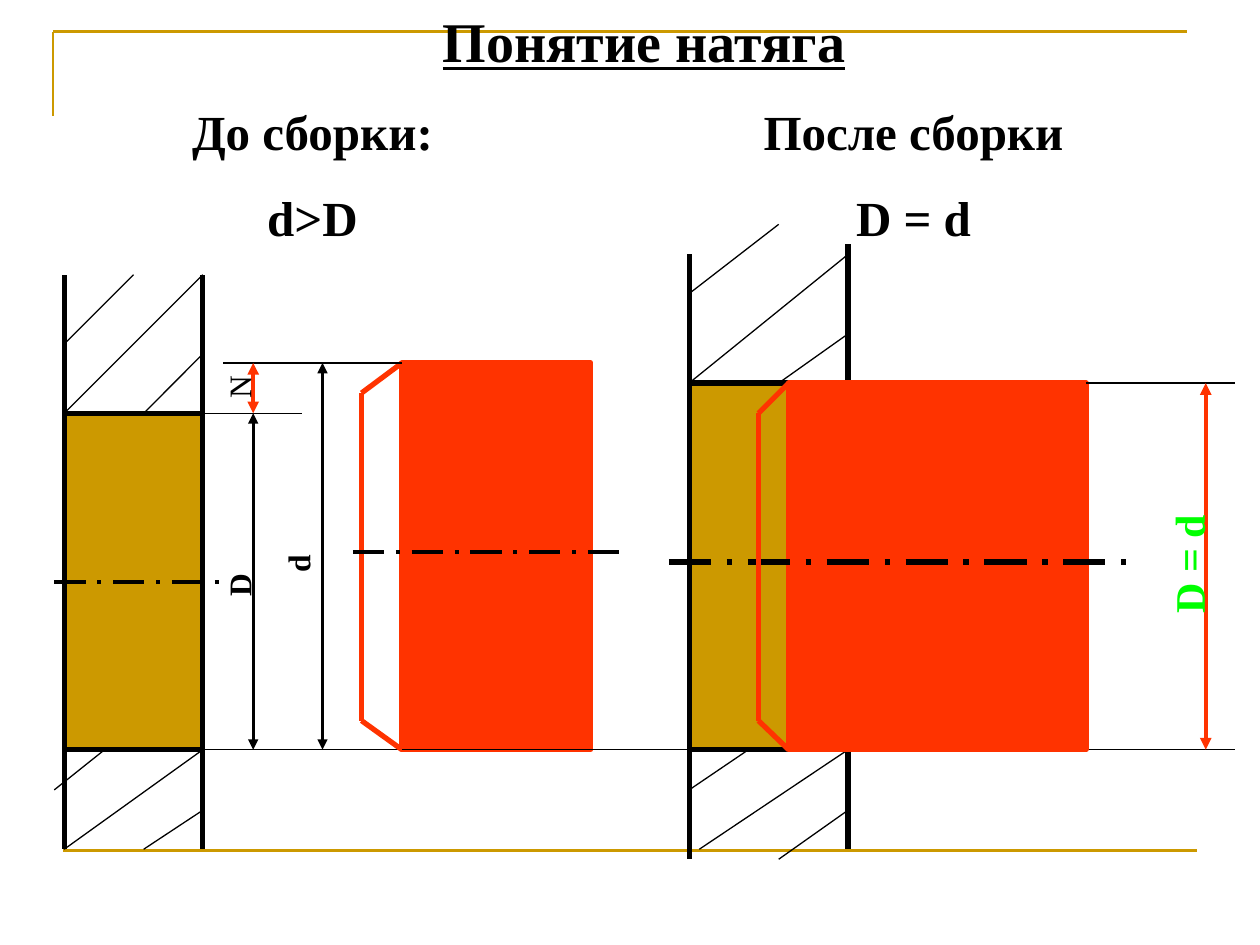
from itertools import pairwise
from pptx import Presentation
from pptx.dml.color import RGBColor
from pptx.enum.dml import MSO_LINE
from pptx.enum.shapes import MSO_CONNECTOR as Conn, MSO_SHAPE as Kind
from pptx.enum.text import MSO_ANCHOR as Anchor, PP_ALIGN as Align
from pptx.oxml.ns import qn
from pptx.util import Pt
from lxml.etree import SubElement

BLACK, GOLD, RED, GREEN = "000000", "CC9900", "FF3300", "00FF00"

# Line styles: colour, width, dashed, arrows at both ends
STYLES = {
    "frame": (GOLD, 1.5, False, False),
    "wall": (BLACK, 3, False, False),
    "thin": (BLACK, 0.75, False, False),
    "edge": (RED, 3, False, False),
    "axis": (BLACK, 2.25, True, False),
    "bold axis": (BLACK, 3, True, False),
    "size": (BLACK, 1.5, False, True),
    "red size": (RED, 2.25, False, True),
}

# Shared positions: hole walls, shaft sides, tops and base
HOLE_L, HOLE_R, HOLE_T = 36.7, 115.9, 236.2
SHAFT_L, SHAFT_R, SHAFT_T = 229.7, 337.7, 207.4
FIT_L, FIT_R, FIT_T = 393.8, 484.6, 218.9
PRESS_L, PRESS_R = 450.7, 620.6
BASE, LOW, END = 428.4, 485.3, 705.6

# Parts from back to front: a block is (fill, line, left, top, right, bottom),
# a line is (style, point, point, ...)
BEFORE = [
    (GOLD, BLACK, HOLE_L, HOLE_T, HOLE_R, BASE),
    ("wall", (HOLE_L, BASE), (HOLE_L, LOW)),
    ("wall", (HOLE_R, BASE), (HOLE_R, LOW)),
    ("wall", (HOLE_L, HOLE_T), (HOLE_L, 157)),
    ("wall", (HOLE_R, HOLE_T), (HOLE_R, 157)),
    ("thin", (HOLE_L, HOLE_T), (HOLE_R, 157)),
    ("thin", (82.1, HOLE_T), (HOLE_R, 202.3)),
    ("thin", (HOLE_L, 196.6), (76.3, 157)),
    ("thin", (HOLE_R, BASE), (HOLE_L, LOW)),
    ("thin", (HOLE_R, 463), (82.1, LOW)),
    ("thin", (59.8, BASE), (31, 451.4)),
    ("axis", (31, 332.6), (127.4, 332.6)),
    (RED, RED, SHAFT_L, SHAFT_T, SHAFT_R, BASE),
    ("thin", (HOLE_R, BASE), (241.2, BASE)),
    ("edge", (SHAFT_L, SHAFT_T), (206.6, 224.6), (206.6, 411.8), (SHAFT_L, BASE)),
    ("axis", (201.6, 315.4), (360, 315.4)),
    ("thin", (SHAFT_L, SHAFT_T), (127.4, SHAFT_T)),
    ("thin", (HOLE_R, HOLE_T), (172.8, HOLE_T)),
    ("size", (184.3, SHAFT_T), (184.3, BASE)),
    ("size", (144.7, HOLE_T), (144.7, BASE)),
    ("red size", (144.7, SHAFT_T), (144.7, HOLE_T)),
]
AFTER = [
    ("thin", (SHAFT_L, BASE), (END, BASE)),
    (GOLD, BLACK, FIT_L, FIT_T, FIT_R, BASE),
    ("wall", (FIT_L, BASE), (FIT_L, 491)),
    ("wall", (FIT_R, BASE), (FIT_R, LOW)),
    ("wall", (FIT_L, FIT_T), (FIT_L, 145.4)),
    ("wall", (FIT_R, FIT_T), (FIT_R, 139.7)),
    ("thin", (FIT_R, BASE), (399.6, LOW)),
    ("thin", (427.7, BASE), (FIT_L, 451.4)),
    ("thin", (FIT_R, 463), (445, 491)),
    ("thin", (FIT_L, FIT_T), (FIT_R, 145.4)),
    ("thin", (445, FIT_T), (FIT_R, 190.8)),
    ("thin", (FIT_L, 167.8), (445, 128.2)),
    (RED, RED, PRESS_L, FIT_T, PRESS_R, BASE),
    ("bold axis", (382.3, 321.1), (643.7, 321.1)),
    ("edge", (PRESS_L, FIT_T), (433.4, 236.2), (433.4, 411.8), (PRESS_L, BASE)),
    ("thin", (PRESS_R, FIT_T), (END, FIT_T)),
    ("red size", (689, FIT_T), (689, BASE)),
]

# Texts: lines, box, size, colour, bold, alignment, turn
TEXTS = [
    (["D"], (122.4, 320.4, 28.1, 28.8), 18, BLACK, True, Align.RIGHT, 270),
    (["d"], (156.2, 309.6, 28.1, 28.8), 18, BLACK, True, Align.RIGHT, 270),
    (["N"], (122.4, 207.4, 28.1, 28.8), 18, BLACK, False, Align.RIGHT, 270),
    (["До сборки:", "d>D"], (36.7, 54.7, 283.7, 91.4), 28, BLACK, True, Align.CENTER, 0),
    (["D = d"], (636.5, 311.8, 85, 36), 24, GREEN, True, Align.RIGHT, 270),
    (["После сборки", "D = d"], (377.3, 54.7, 289.4, 91.4), 28, BLACK, True, Align.CENTER, 0),
]
TITLE = (["Понятие натяга"], (167, 0, 323.3, 45.4), 32, BLACK, True, Align.RIGHT, 0)


def rgb(code):
    return RGBColor.from_string(code)


def add_block(fill, line, left, top, right, bottom):
    box = shapes.add_shape(Kind.RECTANGLE, Pt(left), Pt(top), Pt(right - left), Pt(bottom - top))
    box.shadow.inherit = False
    box.fill.solid()
    box.fill.fore_color.rgb = rgb(fill)
    box.line.color.rgb = rgb(line)
    box.line.width = Pt(3)


def add_lines(style, *points):
    color, width, dashed, arrows = STYLES[style]
    for start, end in pairwise(points):
        part = shapes.add_connector(Conn.STRAIGHT, *map(Pt, start + end))
        part.line.color.rgb = rgb(color)
        part.line.width = Pt(width)
        if dashed:
            part.line.dash_style = MSO_LINE.LONG_DASH_DOT
        if arrows:
            for tag in ("a:headEnd", "a:tailEnd"):
                SubElement(part.line._get_or_add_ln(), qn(tag), type="triangle")
        SubElement(part._element.spPr, qn("a:effectLst"))


def set_text(shape, lines, box, size, color, bold, align, turn):
    shape.left, shape.top, shape.width, shape.height = map(Pt, box)
    shape.rotation = turn
    frame = shape.text_frame
    frame.word_wrap = True
    frame.vertical_anchor = Anchor.TOP
    frame.text = "\n".join(lines)
    for i, par in enumerate(frame.paragraphs):
        par.alignment = align
        par.space_before = Pt(size * 0.55 if i else 0)
        font = par.font
        font.name, font.size, font.bold = "Times New Roman", Pt(size), bold
        font.color.rgb = rgb(color)


deck = Presentation()
deck.slide_width, deck.slide_height = Pt(720), Pt(540)
slide = deck.slides.add_slide(deck.slide_layouts[5])
shapes = slide.shapes

# Frame and drawing
add_lines("frame", (30.2, 66.2), (30.2, 18), (678.2, 18))
add_lines("frame", (36, 486), (684, 486))
for part in BEFORE + AFTER:
    (add_lines if part[0] in STYLES else add_block)(*part)

# Labels
for item in TEXTS:
    set_text(shapes.add_textbox(0, 0, 0, 0), *item)

# Title, brought in front of the frame
title = shapes.title
set_text(title, *TITLE)
title.text_frame.paragraphs[0].font.underline = True
shapes._spTree.append(title._element)

deck.save("out.pptx")
